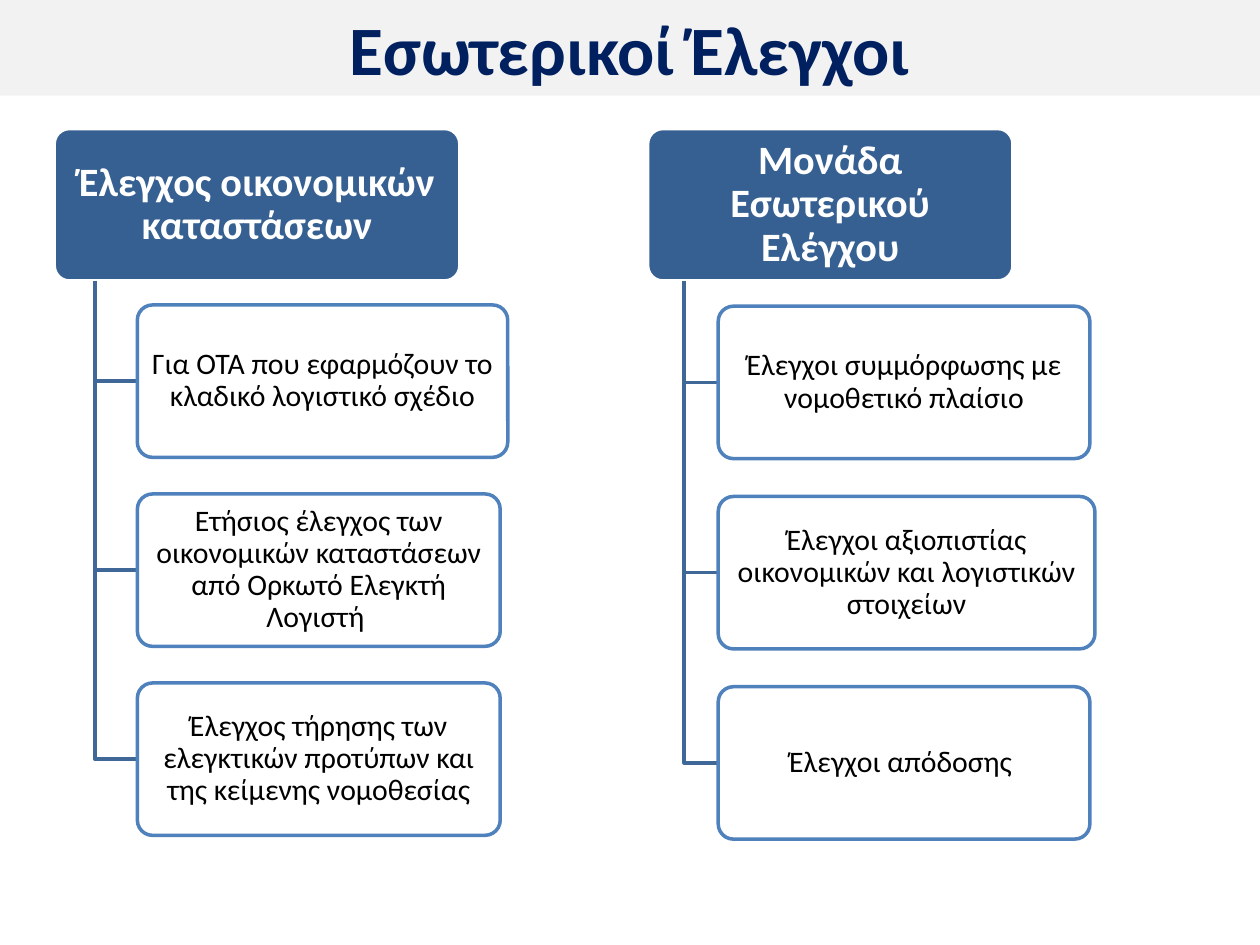
from dataclasses import dataclass

from pptx import Presentation
from pptx.dml.color import RGBColor
from pptx.enum.shapes import MSO_SHAPE
from pptx.enum.text import MSO_ANCHOR, PP_ALIGN
from pptx.util import Inches, Pt

RECT = MSO_SHAPE.RECTANGLE
ROUND = MSO_SHAPE.ROUNDED_RECTANGLE
MIDDLE = MSO_ANCHOR.MIDDLE
CENTER = PP_ALIGN.CENTER


@dataclass(frozen=True)
class Theme:
    """Colours, font and type sizes of the slide."""
    font: str = "Calibri"
    band: str = "F2F2F2"
    navy: str = "002060"
    head: str = "376092"
    edge: str = "4F81BD"
    stem: str = "3F6797"
    white: str = "FFFFFF"
    black: str = "000000"
    title: float = 39.6
    large: float = 23
    small: float = 17
    line: float = 2


THEME = Theme()
WIDE, HIGH = 10, 7.5
TOP, TALL = 1.02, 1.21

GROUPS = [
    {"head": "Έλεγχος οικονομικών καταστάσεων",
     "left": 0.43, "wide": 3.22, "inner": 1.09, "first": 2.42, "pitch": 1.5,
     "items": [
         ("Για ΟΤΑ που εφαρμόζουν το κλαδικό λογιστικό σχέδιο", 2.94),
         ("Ετήσιος έλεγχος των οικονομικών καταστάσεων από Ορκωτό Ελεγκτή Λογιστή ", 2.88),
         ("Έλεγχος τήρησης των ελεγκτικών προτύπων και της κείμενης νομοθεσίας", 2.88)]},
    {"head": "Μονάδα Εσωτερικού Ελέγχου",
     "left": 5.14, "wide": 2.9, "inner": 5.7, "first": 2.43, "pitch": 1.51,
     "items": [
         ("Έλεγχοι συμμόρφωσης με νομοθετικό πλαίσιο", 2.95),
         ("Έλεγχοι αξιοπιστίας οικονομικών και λογιστικών στοιχείων", 2.99),
         ("Έλεγχοι απόδοσης ", 2.95)]},
]


def rgb(code):
    """Turn a hex code into a colour."""
    return RGBColor.from_string(code)


def write(shape, text, size, color, bold=False, pad=(0.1, 0.05), space=1.0):
    """Write centred text into a shape."""
    frame = shape.text_frame
    frame.word_wrap = True
    frame.vertical_anchor = MIDDLE
    frame.margin_left = frame.margin_right = Inches(pad[0])
    frame.margin_top = frame.margin_bottom = Inches(pad[1])
    para = frame.paragraphs[0]
    para.alignment = CENTER
    para.line_spacing = space
    run = para.add_run()
    run.text = text
    run.font.name = THEME.font
    run.font.size = Pt(size)
    run.font.bold = bold
    run.font.color.rgb = rgb(color)


def stroke(shape, color):
    """Give a shape its outline."""
    shape.line.color.rgb = rgb(color)
    shape.line.width = Pt(THEME.line)


def box(slide, kind, at, fill, edge=None):
    """Add a filled box, outlined if an edge colour is given."""
    shape = slide.shapes.add_shape(kind, *map(Inches, at))
    shape.shadow.inherit = False
    shape.fill.solid()
    shape.fill.fore_color.rgb = rgb(fill)
    if edge:
        stroke(shape, edge)
    else:
        shape.line.fill.background()
    if kind == ROUND:
        shape.adjustments[0] = 0.1
    return shape


def branch(slide, left, top, right, end):
    """Add an elbow line going down and then right."""
    pen = slide.shapes.build_freeform(Inches(left), Inches(top))
    turns = [(Inches(left), Inches(end)), (Inches(right), Inches(end))]
    pen.add_line_segments(turns, close=False)
    shape = pen.convert_to_shape()
    shape.shadow.inherit = False
    shape.fill.background()
    stroke(shape, THEME.stem)


def tree(slide, group):
    """Add a heading with its branches and items."""
    left, wide, inner = group["left"], group["wide"], group["inner"]
    head = box(slide, ROUND, (left, TOP, wide, TALL), THEME.head, THEME.white)
    write(head, group["head"], THEME.large, THEME.white, bold=True,
          pad=(0.05, 0.03), space=0.9)
    for row, (text, span) in enumerate(group["items"]):
        top = group["first"] + row * group["pitch"]
        branch(slide, left + wide / 10, TOP + TALL, inner, top + TALL / 2)
        item = box(slide, ROUND, (inner, top, span, TALL), THEME.white, THEME.edge)
        write(item, text, THEME.small, THEME.black, pad=(0.04, 0.02), space=0.9)


def main():
    """Build and save the slide."""
    deck = Presentation()
    deck.slide_width, deck.slide_height = Inches(WIDE), Inches(HIGH)
    slide = deck.slides.add_slide(deck.slide_layouts[6])
    title = box(slide, RECT, (0, 0, WIDE, 0.76), THEME.band)
    write(title, "Εσωτερικοί Έλεγχοι", THEME.title, THEME.navy, bold=True)
    for group in GROUPS:
        tree(slide, group)
    deck.save("out.pptx")


if __name__ == "__main__":
    main()
